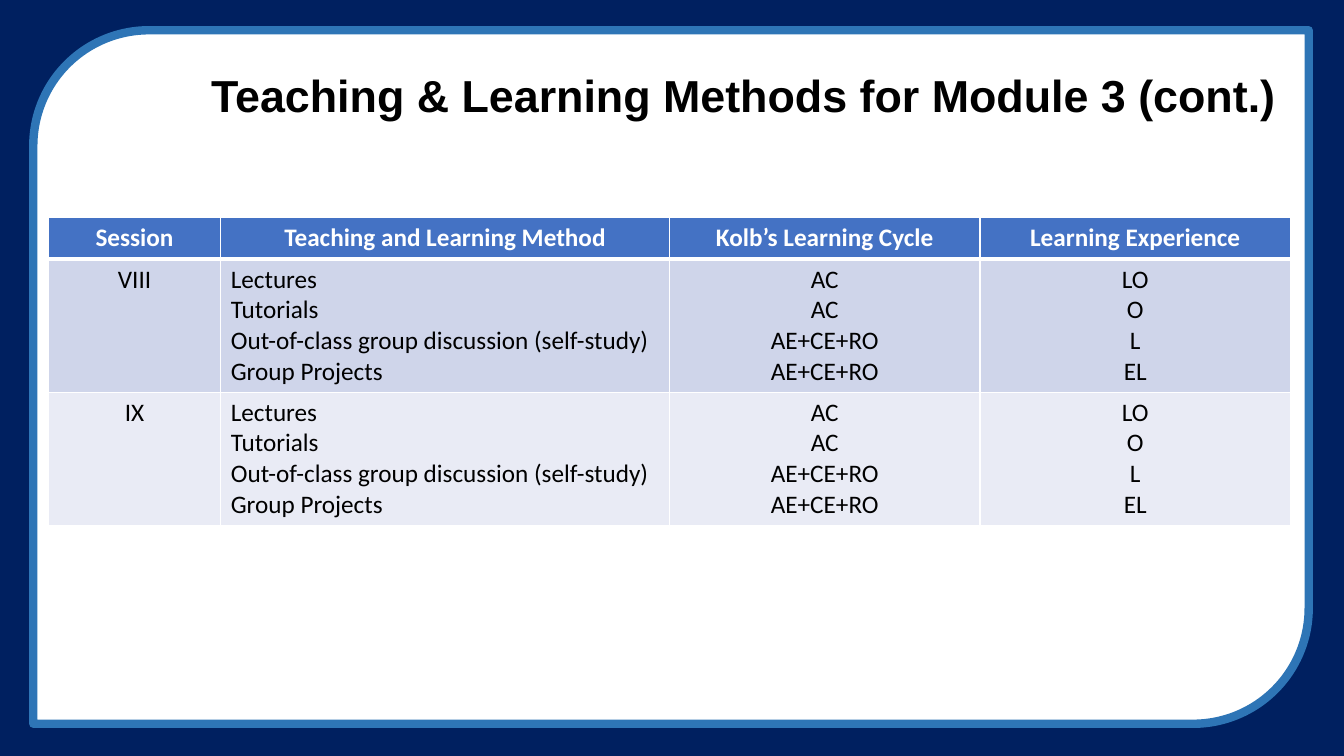
from dataclasses import dataclass

from pptx import Presentation
from pptx import util as u
from pptx.dml.color import RGBColor
from pptx.enum import shapes, text
from pptx.oxml import parse_xml
from pptx.oxml.ns import nsdecls

HUES = {
    "navy": "002060", "blue": "2E75B6", "white": "FFFFFF", "black": "000000",
    "head": "4472C4", "dark": "CFD5EA", "light": "E9EBF5",
}
MID, LEFT = text.PP_ALIGN.CENTER, text.PP_ALIGN.LEFT
KIND = shapes.MSO_SHAPE
METHODS = "Lectures\nTutorials\nOut-of-class group discussion (self-study)\nGroup Projects"
CYCLE = "AC\nAC\nAE+CE+RO\nAE+CE+RO"
GAINS = "LO\nO\nL\nEL"


@dataclass
class Panel:
    kind: KIND
    box: tuple[float, float, float, float]
    fill: str
    line: str | None = None
    turn: int = 0


@dataclass
class Row:
    cells: tuple[str, ...]
    fill: str
    high: float
    head: bool = False


PANELS = [
    Panel(KIND.RECTANGLE, (0, 0, 13.33, 7.5), "navy"),
    Panel(KIND.ROUND_2_DIAG_RECTANGLE, (0.33, 0.3, 12.65, 6.88), "white", "blue", 180),
]
ROWS = [
    Row(("Session", "Teaching and Learning Method", "Kolb’s Learning Cycle",
         "Learning Experience"), "head", 0.41, True),
    Row(("VIII", METHODS, CYCLE, GAINS), "dark", 1.3),
    Row(("IX", METHODS, CYCLE, GAINS), "light", 1.3),
]
WIDTHS = (1.71, 4.45, 3.08, 3.08)


def tint(name: str) -> RGBColor:
    """Return the named colour."""
    return RGBColor.from_string(HUES[name])


def write(frame, words: str, *, size: int = 18, font: str = "Calibri",
          hue: str = "black", bold: bool = False, align=MID, space: float = 1.0) -> None:
    """Fill a text frame with one paragraph per line."""
    frame.text = words
    for para in frame.paragraphs:
        para.alignment, para.line_spacing = align, space
        face = para.font
        face.size, face.name, face.bold = u.Pt(size), font, bold
        face.color.rgb = tint(hue)


def draw(slide, panel: Panel) -> None:
    """Draw one backdrop panel."""
    shape = slide.shapes.add_shape(panel.kind, *map(u.Inches, panel.box))
    shape.shadow.inherit = False
    shape.rotation = panel.turn
    shape.fill.solid()
    shape.fill.fore_color.rgb = tint(panel.fill)
    if panel.line:
        shape.line.color.rgb = tint(panel.line)
        shape.line.width = u.Pt(6)
    else:
        shape.line.fill.background()


def edge(cell, top: int, base: int) -> None:
    """Give a cell white borders with the given top and bottom widths."""
    props = cell._tc.get_or_add_tcPr()
    for side, wide in (("L", 1), ("R", 1), ("T", top), ("B", base)):
        props.append(parse_xml(
            f'<a:ln{side} {nsdecls("a")} w="{u.Pt(wide)}"><a:solidFill>'
            f'<a:srgbClr val="{HUES["white"]}"/></a:solidFill></a:ln{side}>'))


def fill_row(table, index: int, row: Row) -> None:
    """Write and format one table row."""
    table.rows[index].height = u.Inches(row.high)
    for col, words in enumerate(row.cells):
        cell = table.cell(index, col)
        edge(cell, 3 if index == 1 else 1, 3 if row.head else 1)
        cell.fill.solid()
        cell.fill.fore_color.rgb = tint(row.fill)
        write(cell.text_frame, words, bold=row.head,
              hue="white" if row.head else "black",
              align=LEFT if col == 1 and not row.head else MID)


def main() -> None:
    """Build the slide and save it."""
    deck = Presentation()
    deck.slide_width, deck.slide_height = u.Inches(13.33), u.Inches(7.5)
    slide = deck.slides.add_slide(deck.slide_layouts[5])
    for panel in PANELS:
        draw(slide, panel)

    title = slide.shapes.title
    slide.shapes._spTree.append(title._element)
    title.left, title.top = u.Inches(1.96), u.Inches(0.49)
    title.width, title.height = u.Inches(10.84), u.Inches(0.97)
    title.text_frame.vertical_anchor = text.MSO_ANCHOR.MIDDLE
    write(title.text_frame, "Teaching & Learning Methods for Module 3 (cont.)",
          size=32, font="Arial", bold=True, space=0.9)

    high = sum(row.high for row in ROWS)
    box = map(u.Inches, (0.48, 2.16, sum(WIDTHS), high))
    table = slide.shapes.add_table(len(ROWS), len(WIDTHS), *box).table
    for col, wide in zip(table.columns, WIDTHS):
        col.width = u.Inches(wide)
    for index, row in enumerate(ROWS):
        fill_row(table, index, row)
    deck.save("out.pptx")


if __name__ == "__main__":
    main()
